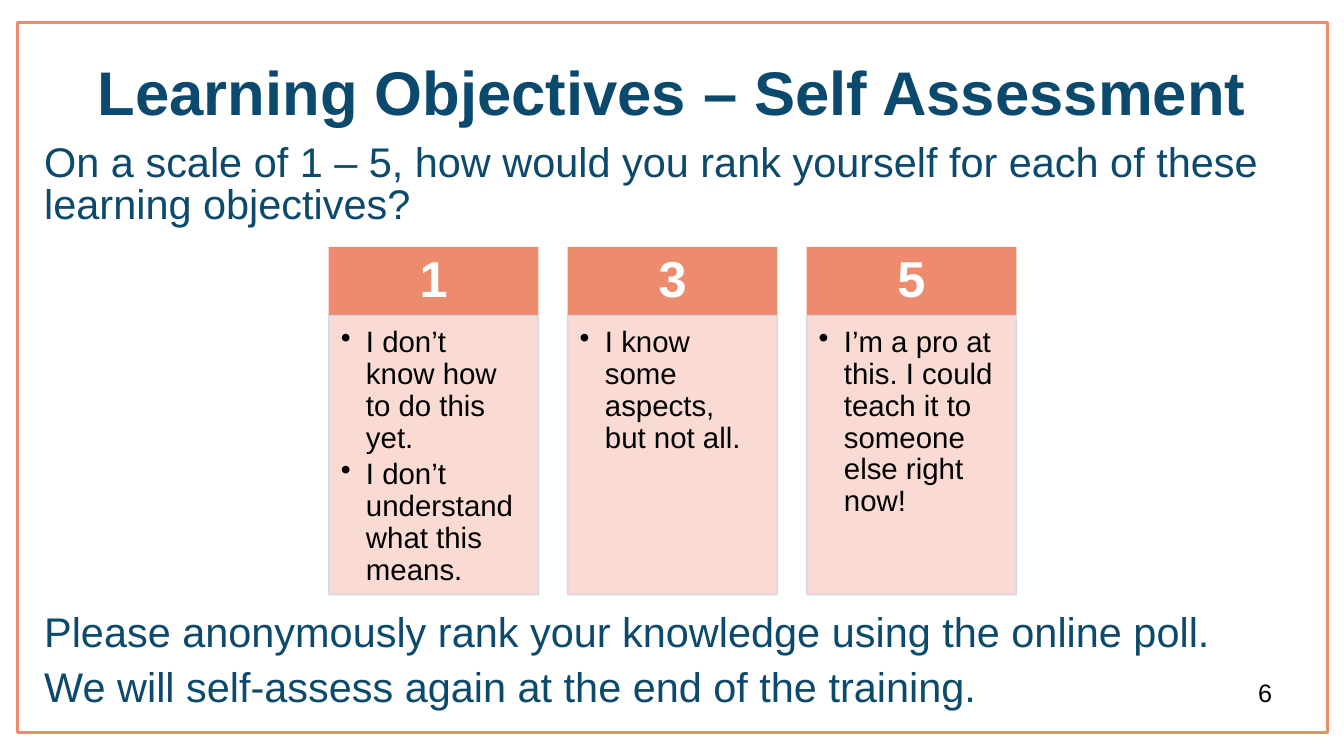
from lxml import etree
from pptx import Presentation
from pptx.dml.color import RGBColor
from pptx.enum import shapes, text
from pptx.oxml import ns
from pptx.util import Inches, Pt

NAVY = RGBColor(0x0C, 0x4A, 0x6D)
CORAL = RGBColor(0xED, 0x8B, 0x6F)
PALE_BLUE = RGBColor(0xCF, 0xD5, 0xEA)
WHITE = RGBColor(0xFF, 0xFF, 0xFF)
BLACK = RGBColor(0, 0, 0)

RATINGS = [
    ("1", ["I don’t know how to do this yet.",
           "I don’t understand what this means."]),
    ("3", ["I know some aspects, but not all."]),
    ("5", ["I’m a pro at this. I could teach it to someone else right now!"]),
]


def set_alpha(fill, percent):
    """Make a solid fill partly transparent."""
    color = fill._xPr.find(ns.qn("a:solidFill"))[0]
    etree.SubElement(color, ns.qn("a:alpha"), val=str(percent * 1000))


def add_bullet(para, indent):
    """Give a paragraph a round bullet with a hanging indent."""
    props = para._p.get_or_add_pPr()
    props.set("marL", str(Inches(indent)))
    props.set("indent", str(-Inches(indent)))
    etree.SubElement(props, ns.qn("a:buChar"), char="•")


def write(shape, lines, size, color, bold=False, align=text.PP_ALIGN.LEFT,
          anchor=text.MSO_ANCHOR.TOP, spacing=1.0, gap=0, bullet=0,
          insets=(0.1, 0.05, 0.1, 0.05)):
    """Fill a shape with formatted paragraphs."""
    frame = shape.text_frame
    frame.word_wrap = True
    frame.vertical_anchor = anchor
    (frame.margin_left, frame.margin_top,
     frame.margin_right, frame.margin_bottom) = map(Inches, insets)
    for index, line in enumerate(lines):
        para = frame.paragraphs[0] if index == 0 else frame.add_paragraph()
        para.alignment = align
        para.line_spacing = spacing
        if index:
            para.space_before = Pt(gap)
        if bullet:
            add_bullet(para, bullet)
        span = para.add_run()
        span.text = line
        span.font.name = "Arial"
        span.font.size = Pt(size)
        span.font.bold = bold
        span.font.color.rgb = color


def add_text(page, left, top, width, height, lines, **style):
    """Add a text box with formatted paragraphs."""
    box = page.shapes.add_textbox(*map(Inches, (left, top, width, height)))
    write(box, lines, **style)


def add_rect(page, left, top, width, height, fill=None, line=None, weight=1):
    """Add a flat rectangle with an optional fill and outline."""
    rect = page.shapes.add_shape(shapes.MSO_SHAPE.RECTANGLE,
                                 *map(Inches, (left, top, width, height)))
    rect.shadow.inherit = False
    if fill is None:
        rect.fill.background()
    else:
        rect.fill.solid()
        rect.fill.fore_color.rgb = fill
    if line is None:
        rect.line.fill.background()
    else:
        rect.line.color.rgb = line
        rect.line.width = Pt(weight)
    return rect


def add_rating(page, left, top, width, height, score, notes, head=0.68):
    """Draw one rating column: a score header above its notes."""
    header = add_rect(page, left, top, width, head, fill=CORAL)
    write(header, [score], size=36, color=WHITE, bold=True, spacing=0.9,
          align=text.PP_ALIGN.CENTER, anchor=text.MSO_ANCHOR.MIDDLE)
    panel = add_rect(page, left, top + head, width, height - head,
                     fill=CORAL, line=PALE_BLUE)
    set_alpha(panel.fill, 30)
    set_alpha(panel.line.fill, 90)
    write(panel, notes, size=21, color=BLACK, spacing=0.9, gap=3.5,
          bullet=0.25, insets=(0.12, 0.12, 0.16, 0.18))


def add_scale(page, left, top, width, height, column=2.08):
    """Spread the rating columns evenly across the given box."""
    step = (width - column) / (len(RATINGS) - 1)
    for index, (score, notes) in enumerate(RATINGS):
        add_rating(page, left + index * step, top, column, height, score, notes)


def add_frame(page, left, top, width, height):
    """Draw the page border with its title and page number."""
    add_rect(page, left, top, width, height, line=CORAL, weight=2)
    add_text(page, left, top, width, 1.45,
             ["Learning Objectives – Self Assessment"], size=44, color=NAVY,
             bold=True, spacing=0.9, align=text.PP_ALIGN.CENTER,
             anchor=text.MSO_ANCHOR.MIDDLE)
    add_text(page, left + width - 0.79, top + height - 0.6, 0.6, 0.5, ["6"],
             size=18, color=BLACK)


def add_prompts(page, left, top, width, height):
    """Place the question at the top of the box and the requests at its foot."""
    style = dict(size=29.6, color=NAVY, spacing=0.84, gap=10)
    add_text(page, left, top, width, 1, [
        "On a scale of 1 – 5, how would you rank yourself for each of these "
        "learning objectives?"], **style)
    add_text(page, left, top + height - 1.1, width, 1.1, [
        "Please anonymously rank your knowledge using the online poll.",
        "We will self-assess again at the end of the training."], **style)


def main():
    """Build the deck and save it."""
    deck = Presentation()
    deck.slide_width, deck.slide_height = Inches(13.33), Inches(7.5)
    page = deck.slides.add_slide(deck.slide_layouts[6])
    add_frame(page, 0.17, 0.22, 13, 7.05)
    add_prompts(page, 0.34, 1.38, 12.64, 5.76)
    add_scale(page, 3.26, 2.45, 6.82, 3.45)
    deck.save("out.pptx")


if __name__ == "__main__":
    main()
